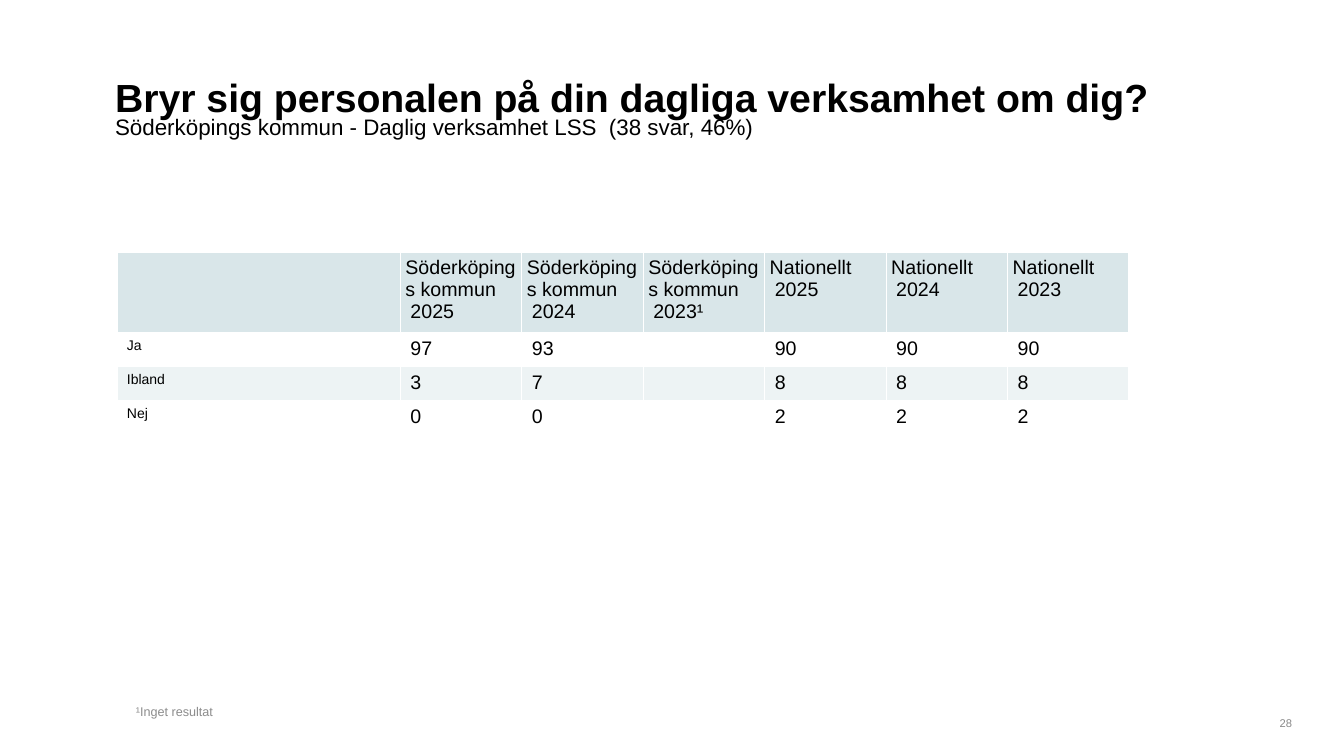
from lxml import etree
from pptx import Presentation
from pptx.dml.color import RGBColor
from pptx.enum import text
from pptx.oxml import ns
from pptx.util import Pt

HEADER_FILL, BAND_FILL, WHITE, BLACK = "D9E6E9", "EDF3F4", "FFFFFF", "000000"
FIRST_COLUMN, VALUE_COLUMN = 202.5, 86.75
HEADER_HEIGHT, ROW_HEIGHT = 57.5, 24.4
CELL_INSET = 3.6

GROUPS = [
    ("Söderköpings kommun", ["2025", "2024", "2023¹"]),
    ("Nationellt", ["2025", "2024", "2023"]),
]
ANSWERS = [
    ("Ja", "97", "93", "", "90", "90", "90"),
    ("Ibland", "3", "7", "", "8", "8", "8"),
    ("Nej", "0", "0", "", "2", "2", "2"),
]


def rgb(value):
    return RGBColor.from_string(value)


def apply(target, formats):
    for name, value in formats.items():
        setattr(target, name, value)


def write(paragraph, wording, size, color=BLACK, bold=False):
    run = paragraph.add_run()
    run.text = wording
    apply(run.font, {"name": "Arial", "size": Pt(size), "bold": bold})
    run.font.color.rgb = rgb(color)


def place(shape, left, top, width, height):
    apply(shape, {"left": Pt(left), "top": Pt(top),
                  "width": Pt(width), "height": Pt(height)})


def fill_heading(heading, wording, top, inset, size, bold=False):
    place(heading, 75, top, 810, 30)
    frame = heading.text_frame
    apply(frame, {"word_wrap": True, "auto_size": text.MSO_AUTO_SIZE.NONE,
                  "vertical_anchor": text.MSO_ANCHOR.TOP,
                  "margin_left": Pt(7.2), "margin_right": Pt(7.2),
                  "margin_top": Pt(inset), "margin_bottom": Pt(0)})
    line = frame.paragraphs[0]
    apply(line, {"alignment": text.PP_ALIGN.LEFT, "line_spacing": 1.0,
                 "space_before": Pt(0)})
    write(line, wording, size, bold=bold)


def add_note(slide, wording, box, size, color, alignment):
    """Add small text that stands on the bottom edge of its box."""
    frame = slide.shapes.add_textbox(*map(Pt, box)).text_frame
    apply(frame, {"word_wrap": True,
                  "vertical_anchor": text.MSO_ANCHOR.BOTTOM})
    line = frame.paragraphs[0]
    line.alignment = alignment
    write(line, wording, size, color)


def add_borders(cell):
    properties = cell._tc.get_or_add_tcPr()
    for side in ("a:lnL", "a:lnR", "a:lnT", "a:lnB"):
        border = etree.SubElement(properties, ns.qn(side), w=str(Pt(1)))
        solid = etree.SubElement(border, ns.qn("a:solidFill"))
        etree.SubElement(solid, ns.qn("a:srgbClr"), val=WHITE)


def indent(paragraph):
    paragraph._p.get_or_add_pPr().set("marL", str(Pt(CELL_INSET)))


def fill_cell(cell, lines, size, color):
    """Fill a cell; only its last line is indented."""
    add_borders(cell)
    cell.fill.solid()
    cell.fill.fore_color.rgb = rgb(color)
    inset = Pt(CELL_INSET if any(lines) else 0)
    apply(cell, {f"margin_{side}": inset
                 for side in ("left", "right", "top", "bottom")})
    frame = cell.text_frame
    for number, wording in enumerate(lines):
        line = frame.add_paragraph() if number else frame.paragraphs[0]
        if number == len(lines) - 1:
            indent(line)
        if wording:
            write(line, wording, size)


def add_answers(slide):
    header = [[""]] + [[group, year] for group, years in GROUPS for year in years]
    rows = [header] + [[[value] for value in answer] for answer in ANSWERS]
    widths = [FIRST_COLUMN] + [VALUE_COLUMN] * (len(header) - 1)
    heights = [HEADER_HEIGHT] + [ROW_HEIGHT] * len(ANSWERS)
    table = slide.shapes.add_table(
        len(rows), len(header), Pt(83.5), Pt(180),
        Pt(sum(widths)), Pt(sum(heights))).table
    apply(table, {"first_row": False, "horz_banding": False})
    for column, width in zip(table.columns, widths):
        column.width = Pt(width)
    for r, (row, height) in enumerate(zip(rows, heights)):
        table.rows[r].height = Pt(height)
        color = HEADER_FILL if r == 0 else WHITE if r % 2 else BAND_FILL
        for c, lines in enumerate(row):
            fill_cell(table.cell(r, c), lines, 14 if c else 10, color)


def main():
    deck = Presentation()
    apply(deck, {"slide_width": Pt(960), "slide_height": Pt(540)})
    slide = deck.slides.add_slide(deck.slide_layouts[0])
    fill_heading(slide.shapes.title,
                 "Bryr sig personalen på din dagliga verksamhet om dig?",
                 45, 7.2, 28, bold=True)
    fill_heading(slide.placeholders[1],
                 "Söderköpings kommun - Daglig verksamhet LSS  (38 svar, 46%)",
                 75, 5.6, 16)
    add_answers(slide)
    add_note(slide, "¹Inget resultat", (90, 232.5, 547, 285), 9, "8C8C8C",
             text.PP_ALIGN.LEFT)
    add_note(slide, "28", (900, 510, 30, 15), 8, "898989", text.PP_ALIGN.RIGHT)
    deck.save("out.pptx")


if __name__ == "__main__":
    main()
